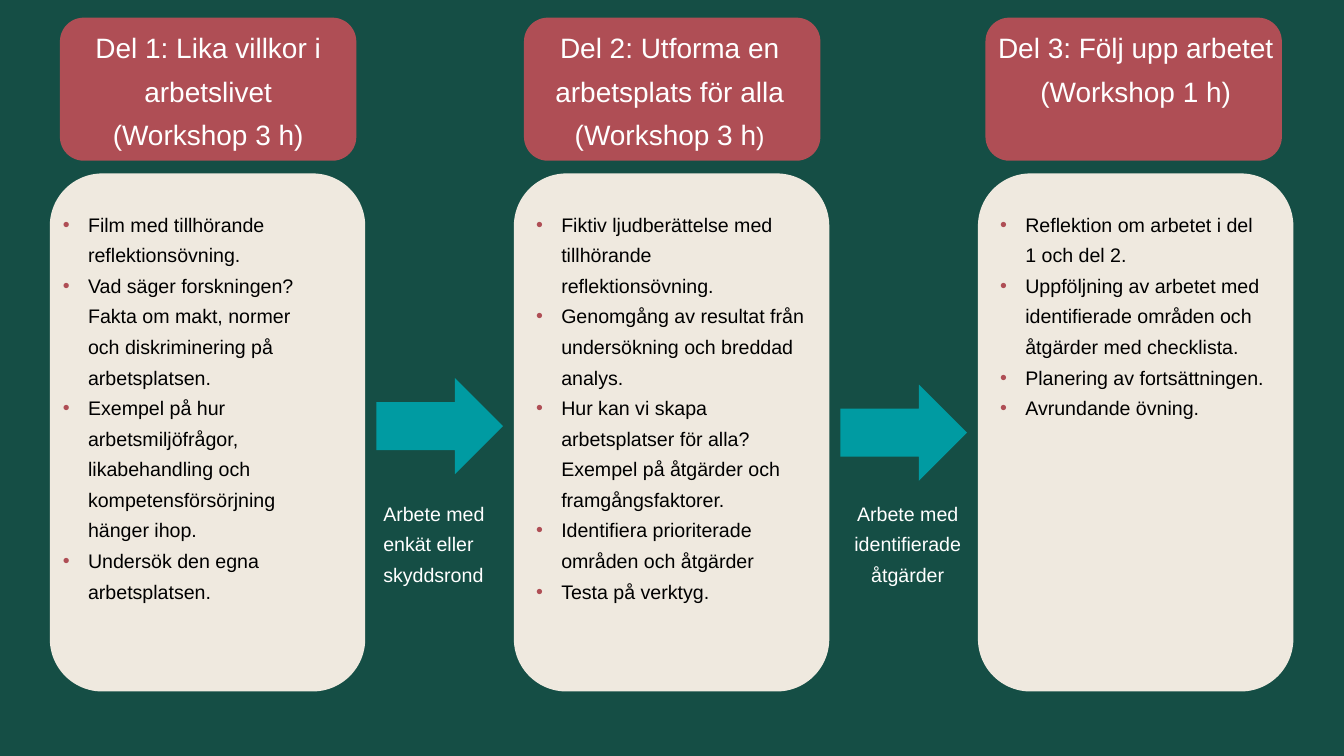
from lxml import etree
from pptx import Presentation
from pptx.dml.color import RGBColor
from pptx.enum import shapes, text
from pptx.oxml import ns
from pptx.util import Cm, Pt

GREEN = RGBColor(0x15, 0x4E, 0x45)
RED = RGBColor(0xAF, 0x4E, 0x55)
CREAM = RGBColor(0xEF, 0xE9, 0xDF)
TEAL = RGBColor(0x00, 0x9B, 0xA2)
WHITE = RGBColor(0xFF, 0xFF, 0xFF)
BLACK = RGBColor(0x00, 0x00, 0x00)

FONT = "Arial"
LEFT, PITCH = 2.51, 23.39
CARD_WIDTH, CARD_TOP, CARD_HEIGHT = 15.9, 8.74, 26.11
HEAD_TOP, HEAD_WIDTH, HEAD_HEIGHT = 0.89, 14.94, 7.21
INDENT = Cm(1.27)

# Insets are measured in cm from the left edge of the column.
COLUMNS = [
    dict(
        title=["Del 1: Lika villkor i arbetslivet", "(Workshop 3 h)"],
        points=[
            "Film med tillhörande reflektionsövning.",
            "Vad säger forskningen? Fakta om makt, normer\voch diskriminering på arbetsplatsen.",
            "Exempel på hur arbetsmiljöfrågor, likabehandling och "
            "kompetensförsörjning hänger ihop.",
            "Undersök den egna arbetsplatsen.",
        ],
        head_inset=0.51, title_inset=0.51, list_inset=0.51,
    ),
    dict(
        title=["Del 2: Utforma en arbetsplats för alla", [("(Workshop 3 h", 40), (")", 36)]],
        points=[
            "Fiktiv ljudberättelse med tillhörande reflektionsövning.",
            "Genomgång av resultat från undersökning och breddad analys.",
            "Hur kan vi skapa arbetsplatser för alla? Exempel på åtgärder "
            "och framgångsfaktorer.",
            "Identifiera prioriterade områden och åtgärder",
            "Testa på verktyg.",
        ],
        head_inset=0.51, title_inset=0.38, list_inset=0.97,
    ),
    dict(
        title=["Del 3: Följ upp arbetet", "(Workshop 1 h)"],
        points=[
            "Reflektion om arbetet i del 1 och del 2.",
            "Uppföljning av arbetet med identifierade områden och "
            "åtgärder med checklista.",
            "Planering av fortsättningen.",
            "Avrundande övning.",
        ],
        head_inset=0.38, title_inset=0.48, list_inset=0.97,
    ),
]

STEPS = [
    dict(caption=["Arbete med enkät eller skyddsrond"],
         arrow_top=19.05, width=6.0, align=text.PP_ALIGN.LEFT),
    dict(caption=["Arbete med identifierade", "åtgärder"],
         arrow_top=19.38, width=6.38, align=text.PP_ALIGN.CENTER),
]


def add_block(page, kind, left, top, width, height, color):
    block = page.shapes.add_shape(kind, Cm(left), Cm(top), Cm(width), Cm(height))
    block.shadow.inherit = False
    block.fill.solid()
    block.fill.fore_color.rgb = color
    block.line.fill.background()


def add_bullet(para, color):
    properties = para._p.get_or_add_pPr()
    properties.set("marL", str(INDENT))
    properties.set("indent", str(-INDENT))
    bullet_color = etree.SubElement(properties, ns.qn("a:buClr"))
    etree.SubElement(bullet_color, ns.qn("a:srgbClr"), val=str(color))
    etree.SubElement(properties, ns.qn("a:buFont"), typeface=FONT)
    etree.SubElement(properties, ns.qn("a:buChar"), char="•")


def add_text(page, paragraphs, left, top, width, height, size=28, color=WHITE,
             align=text.PP_ALIGN.LEFT, bullet=None):
    """Each paragraph is a string or a list of (words, size) spans."""
    box = page.shapes.add_textbox(Cm(left), Cm(top), Cm(width), Cm(height))
    frame = box.text_frame
    frame.word_wrap = True
    frame.margin_left = frame.margin_right = Cm(0.15)
    frame.margin_top = frame.margin_bottom = Cm(0.15)
    for index, content in enumerate(paragraphs):
        para = frame.add_paragraph() if index else frame.paragraphs[0]
        para.alignment = align
        para.line_spacing = 1.3
        if bullet is not None:
            add_bullet(para, bullet)
        spans = [(content, size)] if isinstance(content, str) else content
        for words, span_size in spans:
            for number, line in enumerate(words.split("\v")):
                if number:
                    para.add_line_break()
                span = para.add_run()
                span.text = line
                span.font.name = FONT
                span.font.size = Pt(span_size)
                span.font.color.rgb = color


def add_column(page, left, title, points, head_inset, title_inset, list_inset):
    rounded = shapes.MSO_SHAPE.ROUNDED_RECTANGLE
    add_block(page, rounded, left + head_inset, HEAD_TOP, HEAD_WIDTH, HEAD_HEIGHT, RED)
    add_block(page, rounded, left, CARD_TOP, CARD_WIDTH, CARD_HEIGHT, CREAM)
    add_text(page, title, left + title_inset, HEAD_TOP, HEAD_WIDTH, HEAD_HEIGHT,
             size=40, align=text.PP_ALIGN.CENTER)
    add_text(page, points, left + list_inset, CARD_TOP + 1.47, 13.81, CARD_HEIGHT - 2.94,
             color=BLACK, bullet=RED)


def add_step(page, left, caption, arrow_top, width, align):
    """Place the arrow and its caption in the gap between two columns."""
    add_block(page, shapes.MSO_SHAPE.RIGHT_ARROW, left, arrow_top, 6.38, 4.85, TEAL)
    add_text(page, caption, left + 0.2, 24.77, width, 4.8, align=align)


def main():
    deck = Presentation()
    deck.slide_width, deck.slide_height = Cm(67.74), Cm(38.1)
    page = deck.slides.add_slide(deck.slide_layouts[6])
    page.background.fill.solid()
    page.background.fill.fore_color.rgb = GREEN
    for index, column in enumerate(COLUMNS):
        add_column(page, LEFT + index * PITCH, **column)
    for index, step in enumerate(STEPS):
        add_step(page, LEFT + index * PITCH + CARD_WIDTH + 0.56, **step)
    deck.save("out.pptx")


if __name__ == "__main__":
    main()
